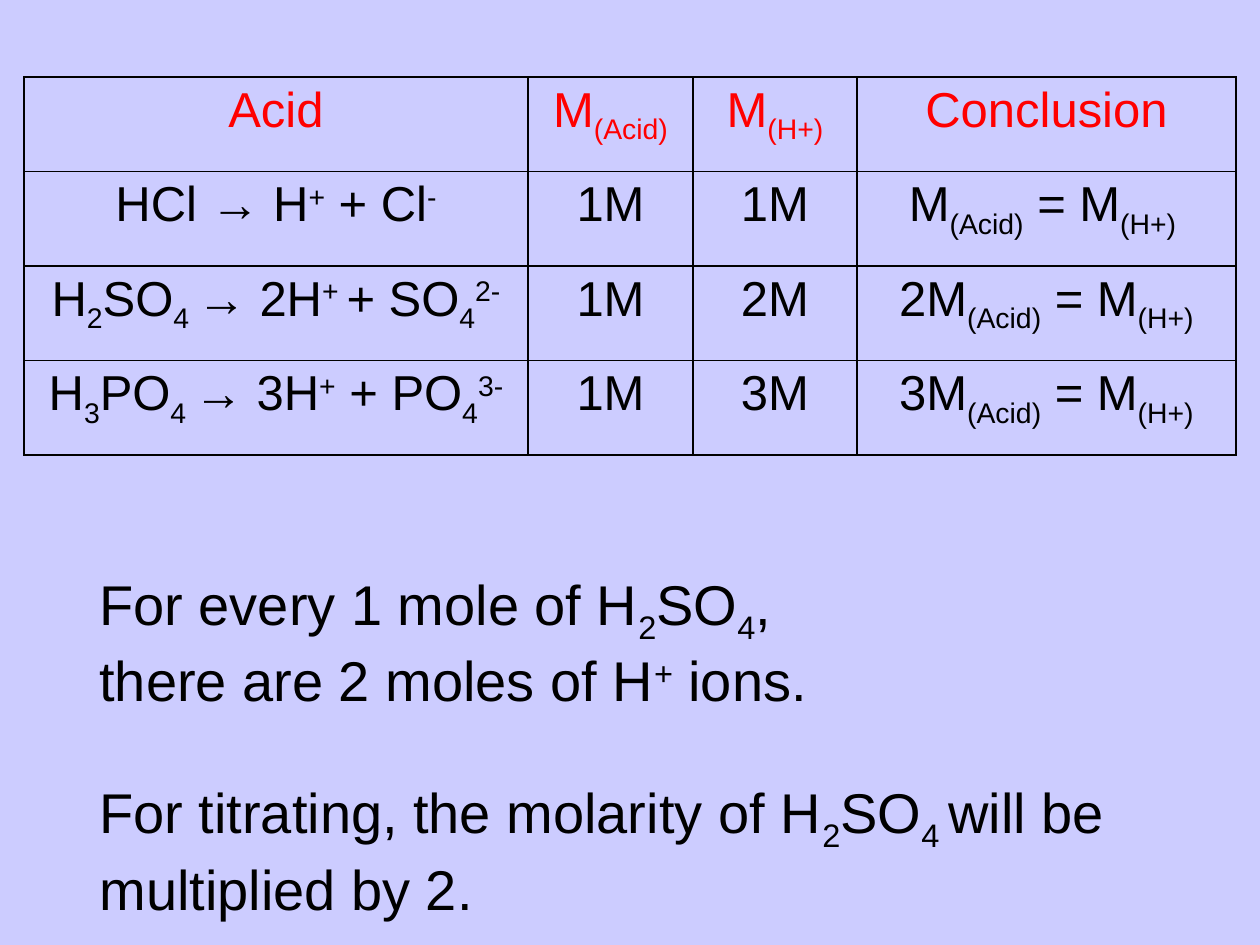
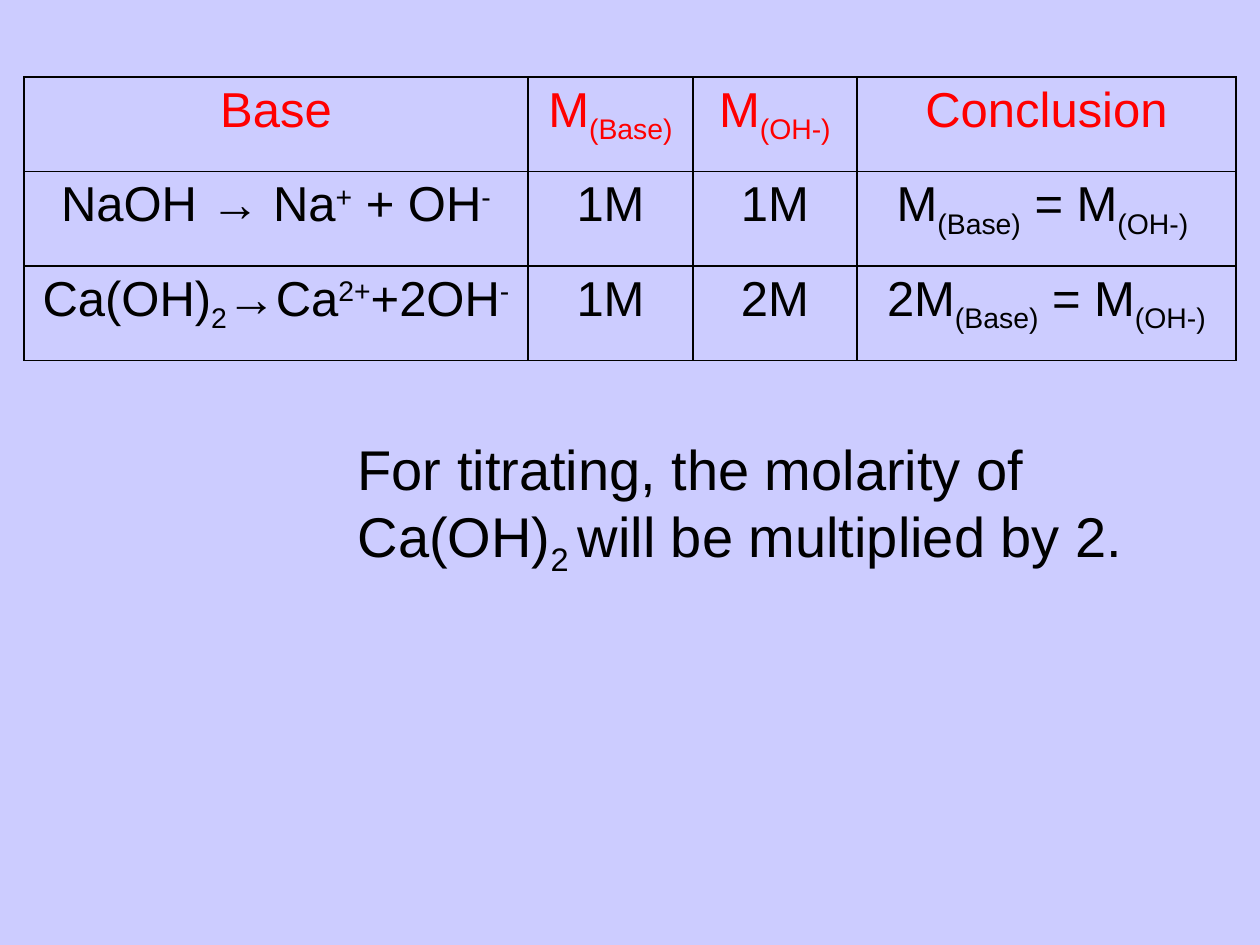
"""Build two slides on the molarity of ions from acids and bases."""
from lxml.etree import SubElement
from pptx import Presentation
from pptx.dml.color import RGBColor as Rgb
from pptx.enum.text import MSO_AUTO_SIZE as AutoSize, PP_ALIGN as Align
from pptx.oxml.ns import qn
from pptx.util import Inches, Pt

BACKGROUND, HEADING, INK = "CCCCFF", "FF0000", "000000"
FONT, TABLE_SIZE, NOTE_SIZE = "Arial", 28, 32
COLUMNS, ROW = (4, 1.31, 1.3, 3.01), 0.75
TABLE_LEFT, TABLE_TOP = 0.19, 0.61
SHIFTS = {"_": -25000, "^": 30000}


def write(para, markup, size, colour):
    """Add runs split at |, where a leading _ lowers and ^ raises the run."""
    for part in markup.split("|"):
        shift = SHIFTS.get(part[0])
        span = para.add_run()
        span.text = part[1:] if shift else part
        span.font.name, span.font.size = FONT, Pt(size)
        span.font.color.rgb = Rgb.from_string(colour)
        if shift:
            span.font._element.set("baseline", str(shift))


def frame(cell):
    """Give a cell thin black borders and no fill."""
    properties = cell._tc.get_or_add_tcPr()
    for side in ("lnL", "lnR", "lnT", "lnB"):
        line = SubElement(properties, qn(f"a:{side}"), w=str(Pt(1)))
        fill = SubElement(line, qn("a:solidFill"))
        SubElement(fill, qn("a:srgbClr"), val=INK)
    cell.fill.background()


SLIDES = [
    {
        "rows": [
            ("Acid", "M|_(Acid)", "M|_(H+)", "Conclusion"),
            ("HCl → H|^+| + Cl|^-", "1M", "1M", "M|_(Acid)| = M|_(H+) "),
            ("H|_2|SO|_4 |→ 2H|^+ |+ SO|_4|^2-", "1M", "2M", "2M|_(Acid)| = M|_(H+)"),
            ("H|_3|PO|_4 |→ 3H|^+| + PO|_4|^3-", "1M", "3M", "3M|_(Acid)| = M|_(H+)"),
        ],
        "note_area": (0.69, 4.47, 8.71, 2.79),
        "note": [
            ("For every 1 mole of H|_2|SO|_4|,", 0),
            ("there are 2 moles of H|^+| ions.", 0),
            ("For titrating, the molarity of H|_2|SO|_4 |will be multiplied by 2.", 37),
        ],
    },
    {
        "rows": [
            ("Base", "M|_(Base)", "M|_(OH-)", "Conclusion"),
            ("NaOH → Na|^+| + OH|^-", "1M", "1M", "M|_(Base)| = M|_(OH-) "),
            ("Ca(OH)|_2|→Ca|^2+|+2OH|^-", "1M", "2M", "2M|_(Base)| = M|_(OH-)"),
        ],
        "note_area": (2.74, 3.4, 6.87, 1.18),
        "note": [("For titrating, the molarity of Ca(OH)|_2 |will be multiplied by 2.", 0)],
    },
]

deck = Presentation()
deck.slide_width, deck.slide_height = Inches(10), Inches(7.5)
backdrop = deck.slide_master.background.fill
backdrop.solid()
backdrop.fore_color.rgb = Rgb.from_string(BACKGROUND)

for content in SLIDES:
    page = deck.slides.add_slide(deck.slide_layouts[6])
    rows = content["rows"]
    table = page.shapes.add_table(
        len(rows), len(COLUMNS), Inches(TABLE_LEFT), Inches(TABLE_TOP),
        Inches(sum(COLUMNS)), Inches(ROW * len(rows))).table
    table.first_row = table.horz_banding = False
    for column, width in zip(table.columns, COLUMNS):
        column.width = Inches(width)
    for row_index, row in enumerate(rows):
        table.rows[row_index].height = Inches(ROW)
        for column_index, markup in enumerate(row):
            cell = table.cell(row_index, column_index)
            frame(cell)
            para = cell.text_frame.paragraphs[0]
            para.alignment = Align.CENTER
            write(para, markup, TABLE_SIZE, INK if row_index else HEADING)

    box = page.shapes.add_textbox(*map(Inches, content["note_area"])).text_frame
    box.word_wrap = True
    box.auto_size = AutoSize.SHAPE_TO_FIT_TEXT
    for index, (markup, gap) in enumerate(content["note"]):
        para = box.add_paragraph() if index else box.paragraphs[0]
        if gap:
            para.space_before = Pt(gap)
        write(para, markup, NOTE_SIZE, INK)

deck.save("out.pptx")
